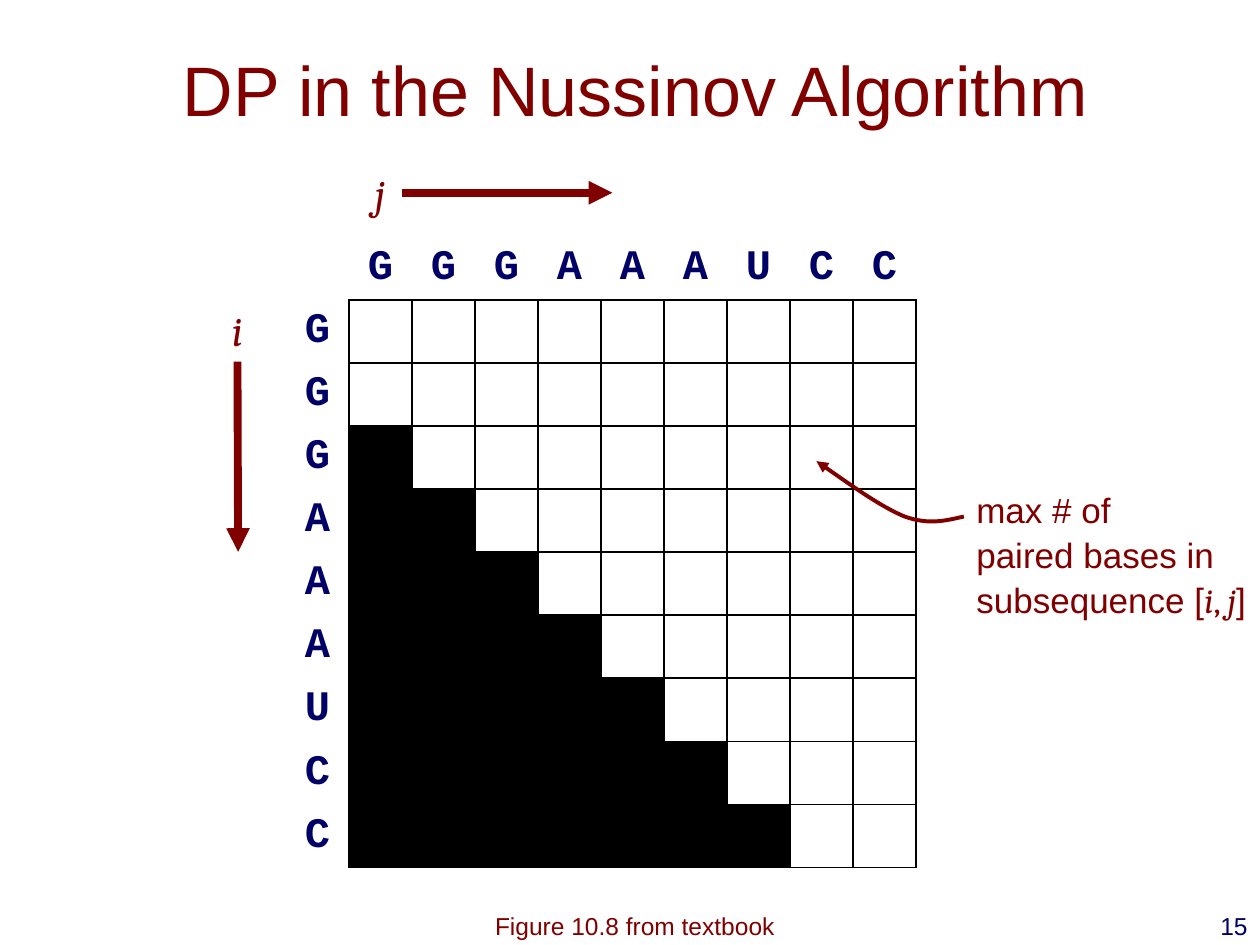
from dataclasses import dataclass
from typing import Any, NamedTuple

import pptx
import pptx.dml.color
import pptx.enum.shapes
import pptx.enum.text
import pptx.oxml
import pptx.oxml.ns
import pptx.oxml.xmlchemy
import pptx.util
from lxml import etree

Inches = pptx.util.Inches
Pt = pptx.util.Pt
RGB = pptx.dml.color.RGBColor
Align = pptx.enum.text.PP_ALIGN
Anchor = pptx.enum.text.MSO_ANCHOR
qn = pptx.oxml.ns.qn


@dataclass(frozen=True)
class Theme:
    red: str = "800000"
    navy: str = "000066"
    black: str = "000000"
    sans: str = "Arial"
    math: str = "Cambria"
    mono: str = "Courier New"
    title: int = 40
    label: int = 24
    note: int = 20
    small: int = 14


THEME = Theme()


class Run(NamedTuple):
    text: str
    font: str = ""
    italic: bool = False


class Box(NamedTuple):
    left: float
    top: float
    width: float
    height: float

    def place(self) -> list[int]:
        return [Inches(side) for side in self]


class Axis(NamedTuple):
    name: str
    box: Box
    site: int
    end: tuple[float, float]


SEQ = "GGGAAAUCC"
CELL = 0.5
GRID = Box(2.27, 1.88, CELL * (len(SEQ) + 1), CELL * (len(SEQ) + 1))
AXES = [
    Axis("j", Box(2.84, 1.28, 0.35, 0.5), 3, (4.86, 1.53)),
    Axis("i", Box(1.71, 2.37, 0.35, 0.5), 2, (1.89, 4.38)),
]
NOTE = [
    [Run("max # of")],
    [Run("paired bases in")],
    [
        Run("subsequence ["),
        Run("i", THEME.math, True),
        Run(", ", THEME.math),
        Run("j", THEME.math, True),
        Run("]"),
    ],
]
CURVE = [
    (7.65, 4.1),
    (7.51, 4.13), (7.38, 4.17), (7.18, 4.1),
    (6.99, 4.02), (6.74, 3.84), (6.48, 3.66),
]


def write(frame: Any, text: str | list[list[Run]], *, size: int,
          font: str = THEME.sans, color: str = THEME.red, bold: bool = False,
          italic: bool = False, align: Any = Align.LEFT, gap: float = 0) -> None:
    lines = [[Run(text, font, italic)]] if isinstance(text, str) else text
    for index, line in enumerate(lines):
        para = frame.add_paragraph() if index else frame.paragraphs[0]
        para.alignment = align
        if gap:
            para.space_after = Pt(gap)
        for part in line:
            run = para.add_run()
            run.text = part.text
            run.font.name = part.font or font
            run.font.size = Pt(size)
            run.font.bold = bold
            run.font.italic = part.italic
            run.font.color.rgb = RGB.from_string(color)


def add_text(slide: Any, box: Box, text: str | list[list[Run]],
             wrap: bool = True, **style: Any) -> Any:
    shape = slide.shapes.add_textbox(*box.place())
    shape.text_frame.word_wrap = wrap
    write(shape.text_frame, text, **style)
    return shape


def style_line(shape: Any, width: float) -> None:
    shape.line.color.rgb = RGB.from_string(THEME.red)
    shape.line.width = Pt(width)
    line = shape.line._get_or_add_ln()
    etree.SubElement(line, qn("a:tailEnd"), type="triangle")


def set_edge(cell: Any, side: str, drawn: bool) -> None:
    props = cell._tc.get_or_add_tcPr()
    edge = etree.SubElement(props, qn(f"a:ln{side}"), w=str(Pt(1)))
    if drawn:
        fill = etree.SubElement(edge, qn("a:solidFill"))
        etree.SubElement(fill, qn("a:srgbClr"), val=THEME.black)
    else:
        etree.SubElement(edge, qn("a:noFill"))


def fill_cell(cell: Any, row: int, col: int) -> None:
    body = row > 0 and col > 0
    edges = {
        "L": body,
        "R": row > 0,
        "T": body,
        "B": col > 0,
    }
    for side, drawn in edges.items():
        set_edge(cell, side, drawn)
    if body and col < row - 1:
        cell.fill.solid()
        cell.fill.fore_color.rgb = RGB.from_string(THEME.black)
    else:
        cell.fill.background()
    if not body and row + col > 0:
        cell.vertical_anchor = Anchor.MIDDLE
        write(cell.text_frame, SEQ[row + col - 1], size=THEME.label,
              font=THEME.mono, color=THEME.navy, bold=True, align=Align.CENTER)


def add_grid(slide: Any) -> None:
    count = len(SEQ) + 1
    table = slide.shapes.add_table(count, count, *GRID.place()).table
    table.first_row = False
    table.horz_banding = False
    for row in range(count):
        table.rows[row].height = Inches(CELL)
        table.columns[row].width = Inches(CELL)
        for col in range(count):
            fill_cell(table.cell(row, col), row, col)


def add_axis(slide: Any, axis: Axis) -> None:
    label = add_text(slide, axis.box, axis.name, size=THEME.label,
                     font=THEME.math, italic=True, align=Align.CENTER)
    x, y = (Inches(value) for value in axis.end)
    arrow = slide.shapes.add_connector(
        pptx.enum.shapes.MSO_CONNECTOR.STRAIGHT, x, y, x, y)
    arrow.begin_connect(label, axis.site)
    style_line(arrow, 4.5)
    etree.SubElement(arrow._element.spPr, qn("a:effectLst"))


def add_curve(slide: Any, points: list[tuple[float, float]]) -> None:
    start, *rest = [(Inches(x), Inches(y)) for x, y in points]
    form = slide.shapes.build_freeform(*start)
    form.add_line_segments(rest, close=False)
    shape = form.convert_to_shape()
    steps = list(shape._element.iter(qn("a:lnTo")))
    for first in range(0, len(steps), 3):
        trio = steps[first:first + 3]
        bend = etree.Element(qn("a:cubicBezTo"))
        trio[0].addprevious(bend)
        for step in trio:
            bend.append(step[0])
            step.getparent().remove(step)
    shape.fill.background()
    style_line(shape, 2.25)
    shape.shadow.inherit = False


def main() -> None:
    deck = pptx.Presentation()
    deck.slide_width, deck.slide_height = Inches(10), Inches(7.5)
    slide = deck.slides.add_slide(deck.slide_layouts[5])
    title = slide.shapes.title
    title.left, title.top, title.width, title.height = Box(
        0.33, 0.08, 9.42, 1.25).place()
    title.text_frame.vertical_anchor = Anchor.MIDDLE
    write(title.text_frame, "DP in the Nussinov Algorithm",
          size=THEME.title, align=Align.CENTER)
    add_text(slide, Box(7.92, 7.18, 2.08, 0.5), "15", size=THEME.small,
             color=THEME.navy, align=Align.RIGHT)
    add_grid(slide)
    for axis in AXES:
        add_axis(slide, axis)
    add_text(slide, Box(3.24, 7.18, 3.6, 0.34), "Figure 10.8 from textbook",
             size=THEME.small, align=Align.CENTER)
    add_text(slide, Box(7.65, 3.83, 2.38, 1.1), NOTE, wrap=False,
             size=THEME.note, gap=1.5)
    add_curve(slide, CURVE)
    deck.save("out.pptx")


if __name__ == "__main__":
    main()
